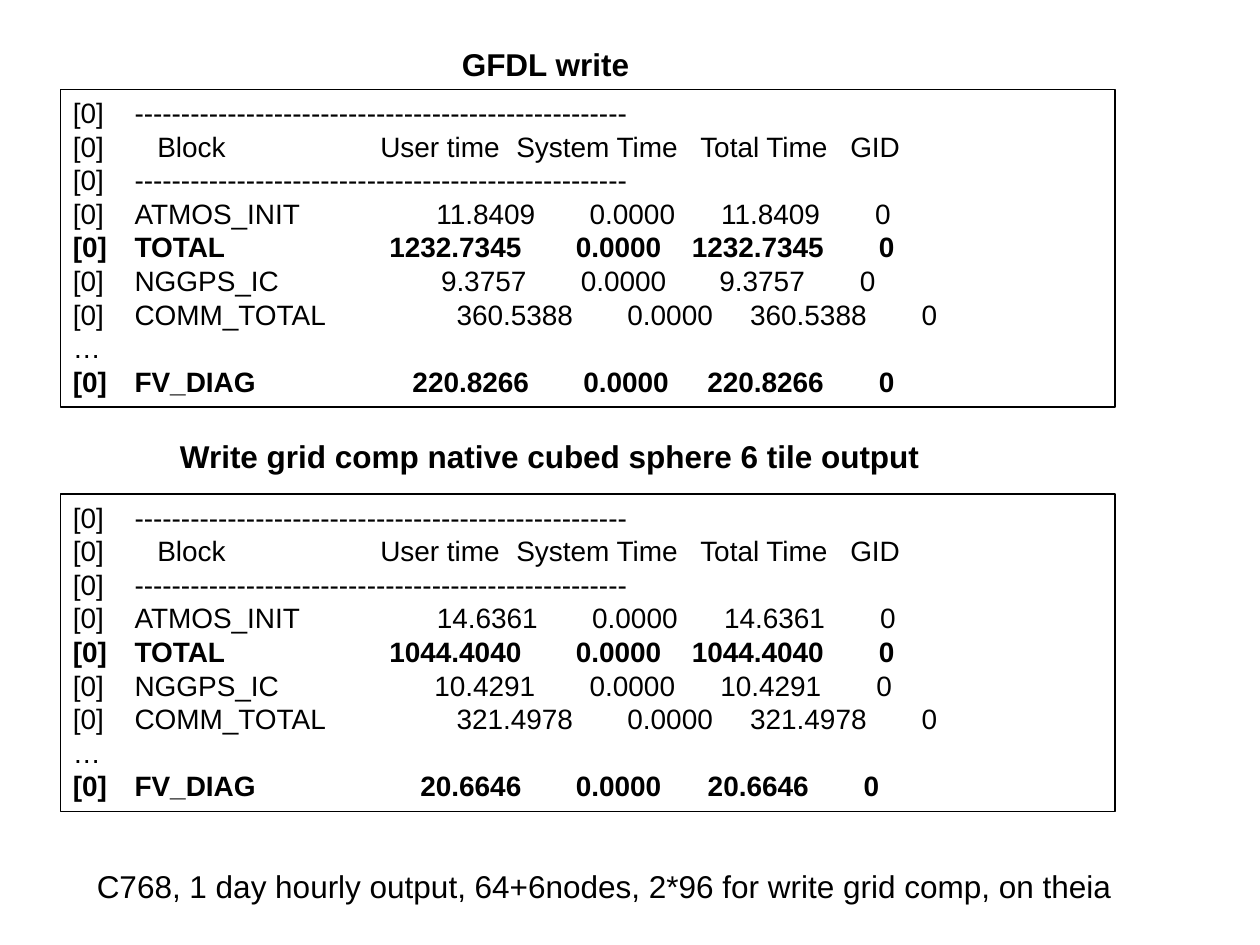
from lxml import etree
from pptx import Presentation
from pptx.dml.color import RGBColor
from pptx.enum.shapes import MSO_SHAPE as Shape
from pptx.enum.text import MSO_ANCHOR as Anchor, MSO_AUTO_SIZE as AutoSize, PP_ALIGN as Align
from pptx.oxml.ns import qn
from pptx.util import Inches, Pt

BLACK = RGBColor(0, 0, 0)
FONT = "Arial"
RANK = "[0]"
RULE = "-" * 53
LABEL_STOP = 0.49
HEADER_STOPS = [(stop, "l") for stop in (0.67, 2.44, 3.52, 4.98, 6.17)]
SYSTEM_OFFSET = 1.11
GID_OFFSET = 0.56

GFDL_TIMINGS = [
    ("ATMOS_INIT", "11.8409", 3.67, 5.93, False),
    ("TOTAL", "1232.7345", 3.56, 5.96, True),
    ("NGGPS_IC", "9.3757", 3.6, 5.81, False),
    ("COMM_TOTAL", "360.5388", 3.97, 6.3, False),
    ("FV_DIAG", "220.8266", 3.62, 5.96, True),
]
GRID_COMP_TIMINGS = [
    ("ATMOS_INIT", "14.6361", 3.69, 5.97, False),
    ("TOTAL", "1044.4040", 3.56, 5.96, True),
    ("NGGPS_IC", "10.4291", 3.67, 5.94, False),
    ("COMM_TOTAL", "321.4978", 3.97, 6.3, False),
    ("FV_DIAG", "20.6646", 3.56, 5.84, True),
]


def write(paragraph, text, size=18, bold=False, align=Align.LEFT, stops=()):
    paragraph.alignment = align
    if stops:
        tab_list = etree.SubElement(paragraph._p.get_or_add_pPr(), qn("a:tabLst"))
        for position, side in stops:
            etree.SubElement(tab_list, qn("a:tab"), pos=str(Inches(position)), algn=side)
    run = paragraph.add_run()
    run.text = text
    run.font.name = FONT
    run.font.size = Pt(size)
    run.font.bold = bold
    run.font.color.rgb = BLACK


def add_caption(slide, text, left, top, width, **text_format):
    caption = slide.shapes.add_textbox(
        Inches(left), Inches(top), Inches(width), Inches(0.4)).text_frame
    caption.word_wrap = True
    caption.auto_size = AutoSize.SHAPE_TO_FIT_TEXT
    write(caption.paragraphs[0], text, **text_format)


def log_lines(timings):
    rule = ([RANK, RULE], [(LABEL_STOP, "l")], False)
    header = [RANK, "Block", "User time", "System Time", "Total Time", "GID"]
    rows = []
    for block, seconds, user_stop, total_stop, bold in timings:
        right_stops = (user_stop, user_stop + SYSTEM_OFFSET,
                       total_stop, total_stop + GID_OFFSET)
        stops = [(LABEL_STOP, "l")] + [(stop, "r") for stop in right_stops]
        rows.append(([RANK, block, seconds, "0.0000", seconds, "0"], stops, bold))
    ellipsis = (["…"], [], False)
    return [rule, (header, HEADER_STOPS, False), rule, *rows[:-1], ellipsis, rows[-1]]


def add_timing_log(slide, top, timings):
    panel = slide.shapes.add_shape(
        Shape.RECTANGLE, Inches(0.48), Inches(top), Inches(8.37), Inches(2.52))
    panel.shadow.inherit = False
    panel.fill.background()
    panel.line.color.rgb = BLACK
    panel.line.width = Pt(0.75)
    log = panel.text_frame
    log.word_wrap = True
    log.auto_size = AutoSize.SHAPE_TO_FIT_TEXT
    log.vertical_anchor = Anchor.TOP
    for index, (cells, stops, bold) in enumerate(log_lines(timings)):
        line = log.add_paragraph() if index else log.paragraphs[0]
        write(line, "\t".join(cells), size=16, bold=bold, stops=stops)


def main():
    deck = Presentation()
    deck.slide_width, deck.slide_height = Inches(10), Inches(7.5)
    slide = deck.slides.add_slide(deck.slide_layouts[6])
    add_caption(slide, "GFDL write", 3.08, 0.31, 2.5, bold=True, align=Align.CENTER)
    add_caption(slide, "Write grid comp native cubed sphere 6 tile output",
                1.33, 3.42, 7.26, bold=True)
    add_timing_log(slide, 0.71, GFDL_TIMINGS)
    add_timing_log(slide, 3.92, GRID_COMP_TIMINGS)
    add_caption(slide,
                "C768, 1 day hourly output, 64+6nodes, 2*96 for write grid comp, on theia",
                0.67, 6.83, 9)
    deck.save("out.pptx")


if __name__ == "__main__":
    main()
